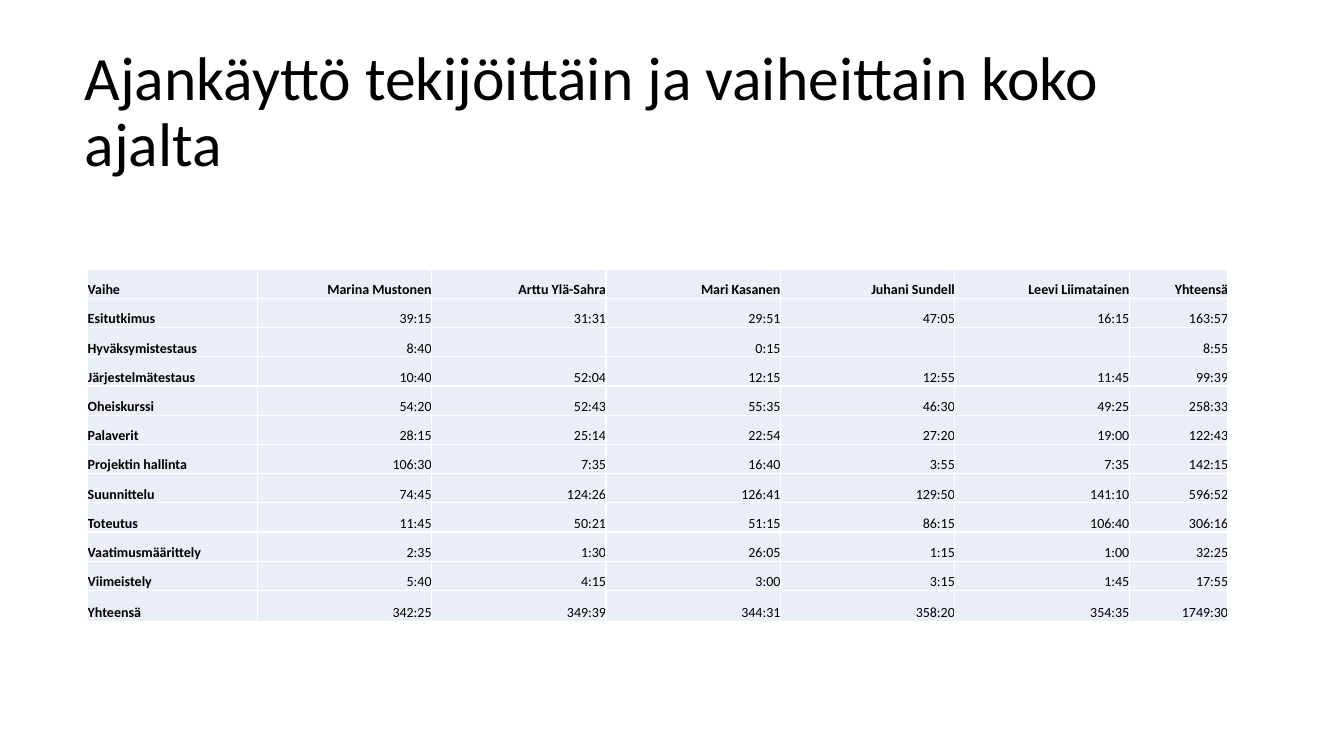
"""Build a slide with a table of hours spent per person and project phase."""
from lxml.etree import SubElement
from pptx import Presentation
from pptx.dml.color import RGBColor
from pptx.enum.text import MSO_ANCHOR, PP_ALIGN
from pptx.oxml.ns import qn
from pptx.util import Inches, Pt

BLACK = RGBColor(0x00, 0x00, 0x00)
WHITE = RGBColor(0xFF, 0xFF, 0xFF)
PALE_BLUE = RGBColor(0xEA, 0xEF, 0xF7)
FONT = "Calibri"

TITLE = "Ajankäyttö tekijöittäin ja vaiheittain koko ajalta"
COLUMN_WIDTHS = [1.68] + [1.73] * 5 + [0.98]
ROW_HEIGHTS = [0.29] * 11 + [0.31]
HOURS = [
    ["Vaihe", "Marina Mustonen", "Arttu Ylä-Sahra", "Mari Kasanen",
     "Juhani Sundell", "Leevi Liimatainen", "Yhteensä"],
    ["Esitutkimus", "39:15", "31:31", "29:51", "47:05", "16:15", "163:57"],
    ["Hyväksymistestaus", "8:40", "", "0:15", "", "", "8:55"],
    ["Järjestelmätestaus", "10:40", "52:04", "12:15", "12:55", "11:45", "99:39"],
    ["Oheiskurssi", "54:20", "52:43", "55:35", "46:30", "49:25", "258:33"],
    ["Palaverit", "28:15", "25:14", "22:54", "27:20", "19:00", "122:43"],
    ["Projektin hallinta", "106:30", "7:35", "16:40", "3:55", "7:35", "142:15"],
    ["Suunnittelu", "74:45", "124:26", "126:41", "129:50", "141:10", "596:52"],
    ["Toteutus", "11:45", "50:21", "51:15", "86:15", "106:40", "306:16"],
    ["Vaatimusmäärittely", "2:35", "1:30", "26:05", "1:15", "1:00", "32:25"],
    ["Viimeistely", "5:40", "4:15", "3:00", "3:15", "1:45", "17:55"],
    ["Yhteensä", "342:25", "349:39", "344:31", "358:20", "354:35", "1749:30"],
]


def style_font(font, size, bold=False):
    """Apply the slide's typeface and text colour at the given size."""
    font.name = FONT
    font.size = Pt(size)
    font.bold = bold
    font.color.rgb = BLACK


def add_title(page, text):
    """Add the slide title, centred vertically in its box."""
    box = page.shapes.add_textbox(Inches(0.74), Inches(0.4), Inches(11.73), Inches(1.45))
    frame = box.text_frame
    frame.word_wrap = True
    frame.vertical_anchor = MSO_ANCHOR.MIDDLE
    para = frame.paragraphs[0]
    para.text = text
    para.line_spacing = 0.9
    style_font(para.font, 44)


def add_borders(cell, color, width):
    """Draw a solid line on all four sides of a cell."""
    properties = cell._tc.get_or_add_tcPr()
    for position, side in enumerate(("a:lnL", "a:lnR", "a:lnT", "a:lnB")):
        line = SubElement(properties, qn(side), w=str(Pt(width)))
        fill = SubElement(line, qn("a:solidFill"))
        SubElement(fill, qn("a:srgbClr"), val=str(color))
        properties.insert(position, line)


def fill_cell(cell, text, heading, align):
    """Write one table cell with its fill, borders and alignment."""
    cell.margin_left = cell.margin_right = cell.margin_top = cell.margin_bottom = 0
    cell.vertical_anchor = MSO_ANCHOR.BOTTOM
    cell.fill.solid()
    cell.fill.fore_color.rgb = PALE_BLUE
    add_borders(cell, WHITE, 1)
    para = cell.text_frame.paragraphs[0]
    para.text = text
    para.alignment = align
    style_font(para.font, 10, heading)


def add_hours_table(page, rows):
    """Add the table of hours with bold headings in the first row and column."""
    frame = page.shapes.add_table(
        len(rows), len(COLUMN_WIDTHS), Inches(0.87), Inches(2.67),
        Inches(sum(COLUMN_WIDTHS)), Inches(sum(ROW_HEIGHTS)))
    table = frame.table
    table.first_row = table.horz_banding = False
    for column, width in zip(table.columns, COLUMN_WIDTHS):
        column.width = Inches(width)
    for row, height in zip(table.rows, ROW_HEIGHTS):
        row.height = Inches(height)
    for row_index, values in enumerate(rows):
        for column_index, text in enumerate(values):
            heading = row_index == 0 or column_index == 0
            align = PP_ALIGN.RIGHT if column_index else PP_ALIGN.LEFT
            fill_cell(table.cell(row_index, column_index), text, heading, align)


def main():
    """Create the deck with its single slide and save it."""
    deck = Presentation()
    deck.slide_width = Inches(13.33)
    deck.slide_height = Inches(7.5)
    page = deck.slides.add_slide(deck.slide_layouts[6])
    add_title(page, TITLE)
    add_hours_table(page, HOURS)
    deck.save("out.pptx")


if __name__ == "__main__":
    main()
